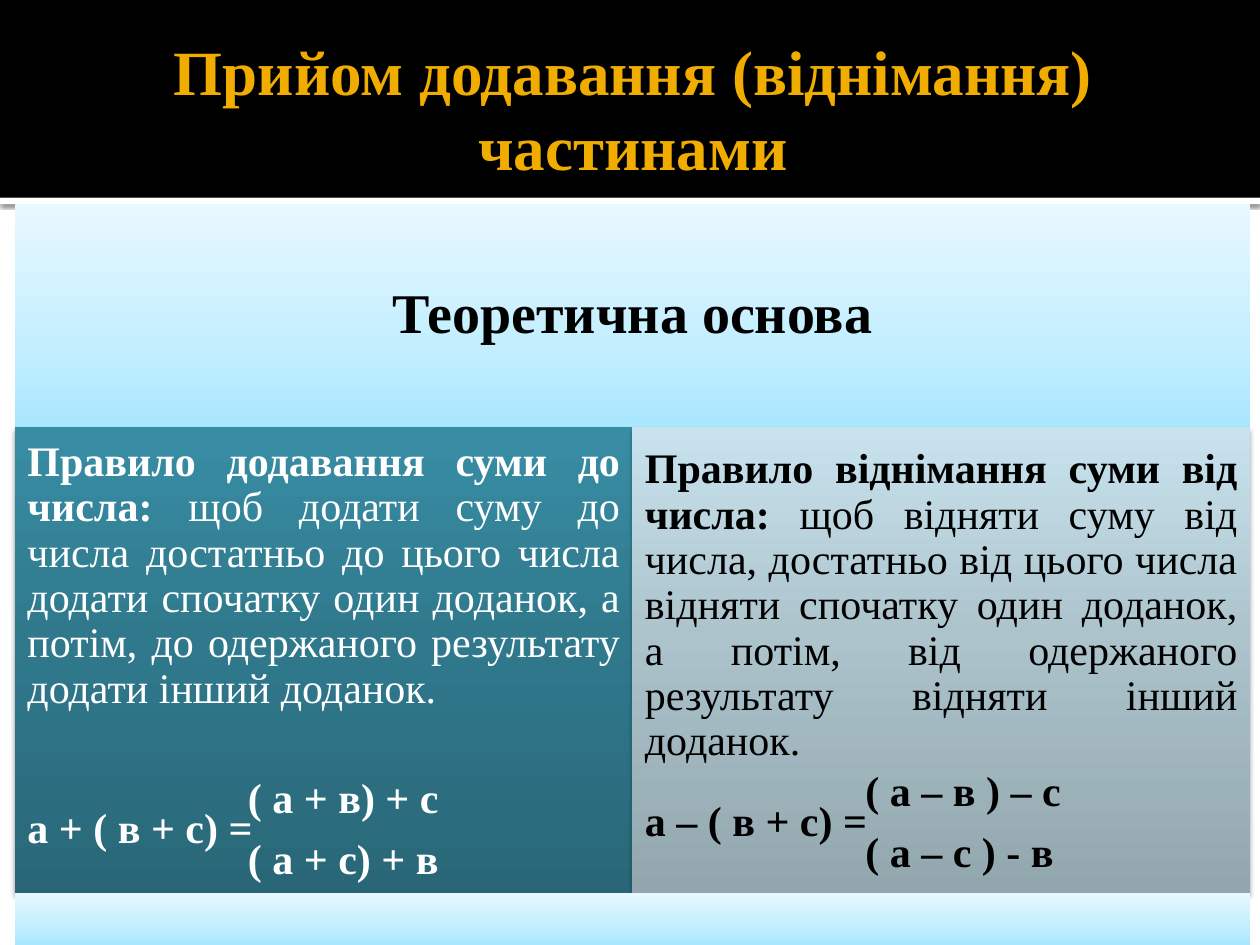
from lxml import etree
from pptx import Presentation
from pptx.dml import color
from pptx.enum import shapes, text
from pptx.oxml import ns
from pptx.util import Inches, Pt

FONT = "Times New Roman"
COLORS = {"black": "000000", "white": "FFFFFF", "title": "F0AD00"}
GRADIENTS = {
    "sky": [(0, "A9E7FF"), (35, "C2EEFF"), (100, "E8F8FF")],
    "teal": [(0, "296778"), (55, "30798D"), (100, "388DA4")],
    "steel": [(0, "92A6AD"), (55, "ACC3CC"), (100, "C8E3EE")],
}
FORMULA_INDENT = 1.75
RULES = [
    {
        "gradient": "teal", "color": "white", "gap": 44,
        "heading": "Правило додавання суми до числа: ",
        "body": "щоб додати суму до числа достатньо до цього числа додати "
                "спочатку один доданок, а потім, до одержаного результату "
                "додати інший доданок.",
        "formulas": ["( а + в) + с", "а + ( в + с) =", "( а + с) + в"],
    },
    {
        "gradient": "steel", "color": "black", "gap": 10,
        "heading": "Правило віднімання суми від числа: ",
        "body": "щоб відняти суму від числа, достатньо від цього числа відняти "
                "спочатку один доданок, а потім, від одержаного результату "
                "відняти інший доданок.",
        "formulas": ["( а – в ) – с", "а – ( в + с) =", "( а – с ) - в"],
    },
]


def add_color(parent, value):
    return etree.SubElement(parent, ns.qn("a:srgbClr"), val=value)


def add_box(slide, left, top, width, height, fill=None, gradient=None, shadow=None):
    shape = slide.shapes.add_shape(
        shapes.MSO_SHAPE.RECTANGLE,
        Inches(left), Inches(top), Inches(width), Inches(height))
    shape.line.fill.background()
    shape.shadow.inherit = False
    if gradient:
        shape.fill.gradient()
        shape.fill.gradient_angle = 90
        stops = shape._element.spPr.find(".//" + ns.qn("a:gsLst"))
        for stop in list(stops):
            stops.remove(stop)
        for position, value in GRADIENTS[gradient]:
            stop = etree.SubElement(stops, ns.qn("a:gs"), pos=str(position * 1000))
            add_color(stop, value)
    else:
        shape.fill.solid()
        shape.fill.fore_color.rgb = color.RGBColor.from_string(COLORS[fill])
    if shadow:
        opacity, blur, distance = shadow
        effects = shape._element.spPr.find(ns.qn("a:effectLst"))
        outer = etree.SubElement(
            effects, ns.qn("a:outerShdw"), blurRad=str(Pt(blur)),
            dist=str(Pt(distance)), dir="5400000", rotWithShape="0")
        etree.SubElement(add_color(outer, COLORS["black"]), ns.qn("a:alpha"),
                         val=str(opacity * 1000))
    return shape


def prepare_frame(shape, inset):
    frame = shape.text_frame
    frame.word_wrap = True
    frame.vertical_anchor = text.MSO_ANCHOR.MIDDLE
    frame.margin_left = frame.margin_right = Inches(inset)
    frame.margin_top = frame.margin_bottom = Inches(inset)
    return frame


def format_run(run, size, color_name, bold=True):
    run.font.name = FONT
    run.font.size = Pt(size)
    run.font.bold = bold
    run.font.color.rgb = color.RGBColor.from_string(COLORS[color_name])


def format_heading(frame, wording, size, color_name):
    frame.text = wording
    paragraph = frame.paragraphs[0]
    paragraph.alignment = text.PP_ALIGN.CENTER
    format_run(paragraph.runs[0], size, color_name)
    return paragraph


def add_title_band(slide, left, top, width, height):
    add_box(slide, left, top + height, width, 0.05, fill="white", shadow=(60, 2.5, 0.8))
    add_box(slide, left, top, width, height, fill="black")
    title = slide.shapes.add_textbox(
        Inches(left + 0.5), Inches(top + 0.17), Inches(width - 1), Inches(1.37))
    frame = prepare_frame(title, 0.05)
    frame.margin_left = Inches(0.1)
    format_heading(frame, "Прийом додавання (віднімання) частинами", 36, "title")


def add_rule_panel(slide, left, top, width, height, rule):
    panel = add_box(slide, left, top, width, height,
                    gradient=rule["gradient"], shadow=(38, 3.1, 2))
    frame = prepare_frame(panel, 0.1)
    paragraph = frame.paragraphs[0]
    paragraph.alignment = text.PP_ALIGN.JUSTIFY
    paragraph.line_spacing = 0.9
    paragraph.space_after = Pt(rule["gap"])
    for key in ("heading", "body"):
        run = paragraph.add_run()
        run.text = rule[key]
        format_run(run, 24, rule["color"], bold=key == "heading")
    for index, formula in enumerate(rule["formulas"]):
        paragraph = frame.add_paragraph()
        paragraph.text = formula
        paragraph.alignment = text.PP_ALIGN.JUSTIFY
        paragraph.line_spacing = 0.6
        if index != 1:
            paragraph._p.get_or_add_pPr().set("marL", str(Inches(FORMULA_INDENT)))
        format_run(paragraph.runs[0], 24, rule["color"])


def add_theory_table(slide, left, top, width, height):
    header_height, panel_height = 1.77, 3.7
    header = add_box(slide, left, top, width, header_height, gradient="sky")
    paragraph = format_heading(prepare_frame(header, 0.13), "Теоретична основа", 32, "black")
    paragraph.line_spacing = 0.9
    panel_top = top + header_height
    panel_width = width / len(RULES)
    for index, rule in enumerate(RULES):
        add_rule_panel(slide, left + index * panel_width, panel_top,
                       panel_width, panel_height, rule)
    footer_top = panel_top + panel_height
    add_box(slide, left, footer_top, width, top + height - footer_top, gradient="sky")


def main():
    presentation = Presentation()
    presentation.slide_width = Inches(10)
    presentation.slide_height = Inches(7.5)
    slide = presentation.slides.add_slide(presentation.slide_layouts[6])
    add_title_band(slide, 0, 0, 10, 1.57)
    add_theory_table(slide, 0.12, 1.62, 9.8, 5.88)
    presentation.save("out.pptx")


if __name__ == "__main__":
    main()
